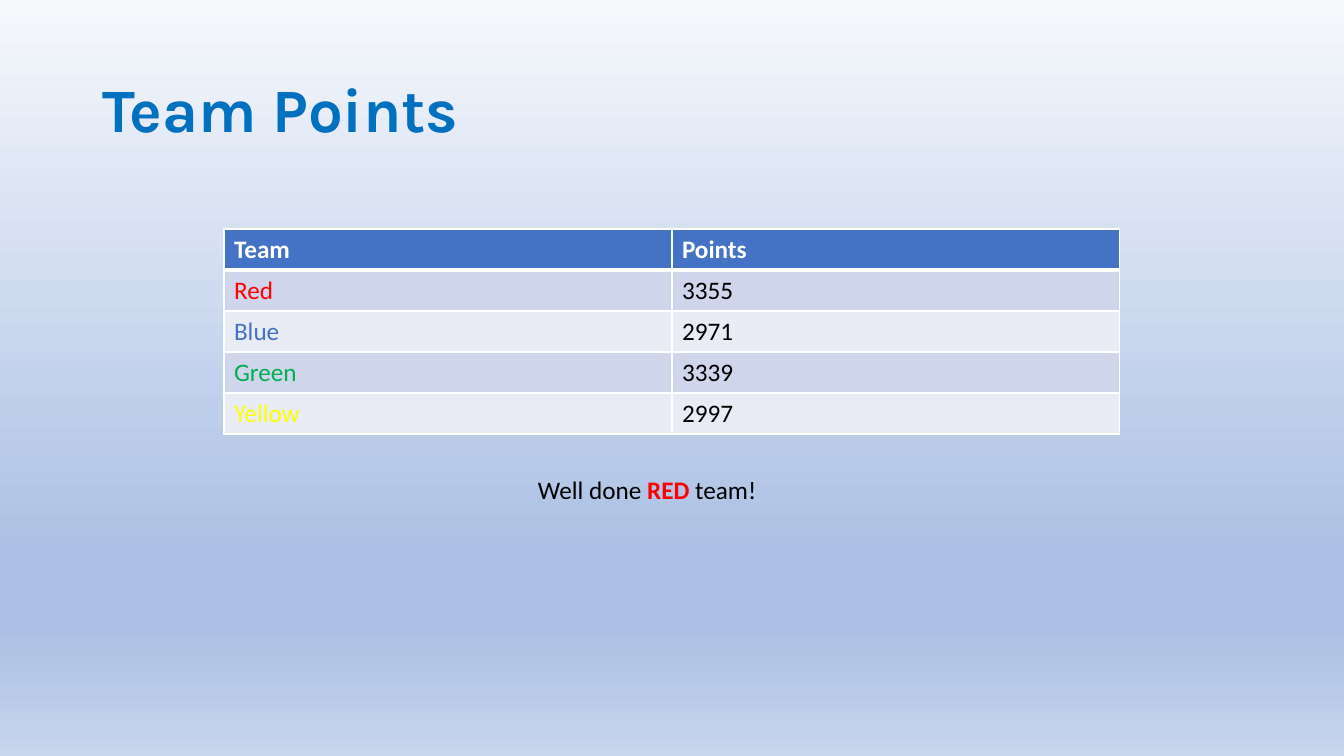
from lxml import etree
from pptx import Presentation
from pptx import util as u
from pptx.dml.color import RGBColor
from pptx.enum import text
from pptx.oxml.ns import qn

SCALE = u.Inches(1) / 100.8
COLORS = {
    "title": "0070C0", "header": "4472C4", "white": "FFFFFF", "black": "000000",
    "odd": "CFD5EA", "even": "E9EBF5",
    "Red": "FF0000", "Blue": "4472C4", "Green": "00B050", "Yellow": "FFFF00",
}
BACKGROUND_STOPS = [(0, "F6F8FC"), (74, "ABC0E4"), (83, "ABC0E4"), (100, "C7D5ED")]
TEAM_POINTS = [("Team", "Points"), ("Red", "3355"), ("Blue", "2971"),
               ("Green", "3339"), ("Yellow", "2997")]


def px(length):
    """Turn pixels into EMU."""
    return u.Emu(round(length * SCALE))


def rgb(name):
    """Look up a named colour."""
    return RGBColor.from_string(COLORS[name])


def format_run(run, color, size=18, font="Calibri", bold=False):
    """Set the font of one run."""
    run.font.name = font
    run.font.size = u.Pt(size)
    run.font.bold = bold
    run.font.color.rgb = rgb(color)


def paint_background(slide):
    """Fill the background with a vertical gradient."""
    fill = slide.background.fill
    fill.gradient()
    fill.gradient_angle = 270
    stops = next(slide.element.iter(qn("a:gsLst")))
    for stop in list(stops):
        stops.remove(stop)
    for position, color in BACKGROUND_STOPS:
        stop = etree.SubElement(stops, qn("a:gs"), pos=str(position * 1000))
        etree.SubElement(stop, qn("a:srgbClr"), val=color)


def place_title(slide, left, top, width, height):
    """Place and format the slide title."""
    title = slide.shapes.title
    title.left, title.top, title.width, title.height = map(px, (left, top, width, height))
    frame = title.text_frame
    frame.text = "Team Points"
    frame.auto_size = text.MSO_AUTO_SIZE.NONE
    frame.vertical_anchor = text.MSO_ANCHOR.MIDDLE
    paragraph = frame.paragraphs[0]
    paragraph.alignment = text.PP_ALIGN.LEFT
    paragraph.line_spacing = 0.9
    format_run(paragraph.runs[0], "title", 44, "Karla", True)


def set_borders(cell, bottom_width):
    """Draw white borders around a cell."""
    properties = cell._tc.get_or_add_tcPr()
    widths = {"lnL": 1, "lnR": 1, "lnT": 1, "lnB": bottom_width}
    for index, (side, width) in enumerate(widths.items()):
        line = etree.Element(qn(f"a:{side}"), w=str(u.Pt(width)))
        fill = etree.SubElement(line, qn("a:solidFill"))
        etree.SubElement(fill, qn("a:srgbClr"), val=COLORS["white"])
        properties.insert(index, line)


def place_table(slide, left, top, width, height):
    """Place the points table with a header and banded rows."""
    row_count, column_count = len(TEAM_POINTS), len(TEAM_POINTS[0])
    table = slide.shapes.add_table(row_count, column_count,
                                   *map(px, (left, top, width, height))).table
    for row_index, values in enumerate(TEAM_POINTS):
        header = row_index == 0
        band = "header" if header else "odd" if row_index % 2 else "even"
        for column_index, value in enumerate(values):
            cell = table.cell(row_index, column_index)
            cell.text = value
            cell.fill.solid()
            cell.fill.fore_color.rgb = rgb(band)
            color = "white" if header else value if value in COLORS else "black"
            format_run(cell.text_frame.paragraphs[0].runs[0], color, bold=header)
            set_borders(cell, 3 if header else 1)


def place_message(slide, left, top, width, height):
    """Place the congratulation to the winning team."""
    frame = slide.shapes.add_textbox(*map(px, (left, top, width, height))).text_frame
    frame.word_wrap = True
    frame.auto_size = text.MSO_AUTO_SIZE.SHAPE_TO_FIT_TEXT
    paragraph = frame.paragraphs[0]
    for words, color in (("Well done ", "black"), ("RED", "Red"), (" team!", "black")):
        run = paragraph.add_run()
        run.text = words
        format_run(run, color, bold=color == "Red")


def main():
    """Build the slide and save it."""
    presentation = Presentation()
    presentation.slide_width, presentation.slide_height = px(1344), px(756)
    slide = presentation.slides.add_slide(presentation.slide_layouts[5])
    paint_background(slide)
    place_title(slide, 92, 40, 1159, 146)
    place_table(slide, 224, 229, 896, 205)
    place_message(slide, 528, 469, 287, 40)
    presentation.save("out.pptx")


if __name__ == "__main__":
    main()
